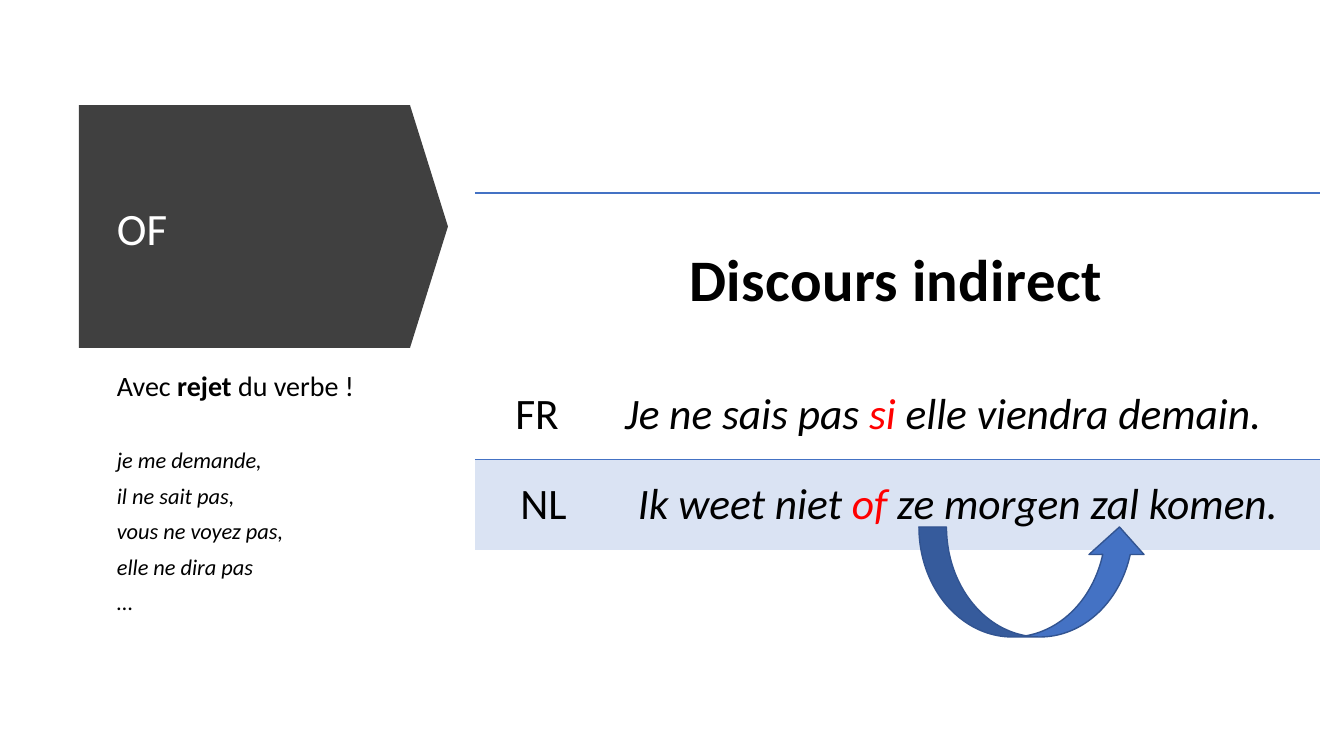
from lxml import etree
from pptx import Presentation
from pptx import util as u
from pptx.dml.color import RGBColor
from pptx.enum import shapes, text
from pptx.oxml.ns import qn

PX = 914400 / 100.8  # EMU per px
COLOURS = {"dark": "404040", "white": "FFFFFF", "black": "000000", "red": "FF0000",
           "blue": "4472C4", "navy": "325491", "pale": "DAE3F3"}

# Content: a paragraph is a list of (text, format) spans
PLAIN, BOLD, ITALIC = {}, {"bold": True}, {"italic": True}
RED = {"italic": True, "colour": "red"}
TITLE = [("OF", {"colour": "white"})]
RULE = [("Avec ", PLAIN), ("rejet", BOLD), (" du verbe !", PLAIN)]
EXAMPLES = [("je me demande,", ITALIC), ("il ne sait pas,", ITALIC),
            ("vous ne voyez pas,", ITALIC), ("elle ne dira pas", ITALIC), ("…", PLAIN)]
HEADING = [("Discours indirect", BOLD)]
SENTENCES = [
    ("FR", [("Je ne sais pas ", ITALIC), ("si", RED), (" elle viendra demain.", ITALIC)]),
    ("NL", [("Ik weet niet ", ITALIC), ("of ", RED), ("ze morgen zal komen.", ITALIC)]),
]

# Layout in px: left, top, width, height
BANNER = (79, 105, 369, 243)
TITLE_BOX = (107, 133, 294, 197)
BODY_BOX = (107, 370, 294, 267)
TABLE = (475, 193, 845, 357)
ARROW = (919, 527, 228, 110)
COLUMNS, ROWS = (150, 695), (177, 90, 90)
TIP = 38


def px(*lengths):
    return [u.Emu(round(length * PX)) for length in lengths]


def rgb(name):
    return RGBColor.from_string(COLOURS[name])


def write(para, spans, size, **layout):
    for name, value in layout.items():
        setattr(para, name, value)
    for words, style in spans:
        span = para.add_run()
        span.text = words
        values = {"name": "Calibri", "size": u.Pt(size), "bold": False, "italic": False, **style}
        span.font.color.rgb = rgb(values.pop("colour", "black"))
        for name, value in values.items():
            setattr(span.font, name, value)


def add_shape(kind, place, fill, line=None):
    shape = page.shapes.add_shape(kind, *px(*place))
    shape.shadow.inherit = False
    shape.fill.solid()
    shape.fill.fore_color.rgb = rgb(fill)
    if line:
        shape.line.color.rgb = rgb(line)
        shape.line.width = u.Pt(1)
    else:
        shape.line.fill.background()
    return shape


def add_box(place, anchor):
    frame = page.shapes.add_textbox(*px(*place)).text_frame
    frame.word_wrap = True
    frame.vertical_anchor = anchor
    return frame


def set_borders(cell, widths):
    """Draw the sides given in points and hide the others."""
    props = cell._tc.get_or_add_tcPr()
    for index, side in enumerate("LRTB"):
        line = etree.Element(qn("a:ln" + side))
        if side in widths:
            line.set("w", str(u.Pt(widths[side])))
            fill = etree.SubElement(line, qn("a:solidFill"))
            etree.SubElement(fill, qn("a:srgbClr"), val=COLOURS["blue"])
        else:
            line.set("w", "0")
            etree.SubElement(line, qn("a:noFill"))
        props.insert(index, line)


def format_cell(cell, insets, fill, borders):
    cell.vertical_anchor = text.MSO_ANCHOR.MIDDLE
    sides = ("margin_left", "margin_top", "margin_right", "margin_bottom")
    for side, inset in zip(sides, px(*insets)):
        setattr(cell, side, inset)
    if fill:
        cell.fill.solid()
        cell.fill.fore_color.rgb = rgb(fill)
    else:
        cell.fill.background()
    set_borders(cell, borders)


deck = Presentation()
deck.slide_width, deck.slide_height = px(1344, 756)
page = deck.slides.add_slide(deck.slide_layouts[6])

# Banner and title
banner = add_shape(shapes.MSO_SHAPE.PENTAGON, BANNER, "dark")
banner.adjustments[0] = TIP / BANNER[3]
frame = add_box(TITLE_BOX, text.MSO_ANCHOR.MIDDLE)
write(frame.paragraphs[0], TITLE, 32, line_spacing=0.9)

# Rule with its examples, the first one set further down
frame = add_box(BODY_BOX, text.MSO_ANCHOR.TOP)
write(frame.paragraphs[0], RULE, 20, line_spacing=0.8, space_before=u.Pt(10))
for index, example in enumerate(EXAMPLES):
    gap = u.Pt(10 if index else 35.5)
    write(frame.add_paragraph(), [example], 16, line_spacing=0.8, space_before=gap)

# Table
table = page.shapes.add_table(len(ROWS), len(COLUMNS), *px(*TABLE)).table
table.first_row = table.horz_banding = False
for column, width in zip(table.columns, px(*COLUMNS)):
    column.width = width
for row, height in zip(table.rows, px(*ROWS)):
    row.height = height

ROW_FORMATS = [  # insets, fill, borders
    ((0, 13, 3, 13), None, {"T": 1.5}),
    ((0, 13, 26, 13), None, {"B": 0.75}),
    ((13, 13, 26, 13), "pale", {"T": 0.75}),
]
for row, row_format in zip(table.rows, ROW_FORMATS):
    for cell in row.cells:
        format_cell(cell, *row_format)

CENTER, LEFT = text.PP_ALIGN.CENTER, text.PP_ALIGN.LEFT
table.cell(0, 0).merge(table.cell(0, 1))
heading = table.cell(0, 0).text_frame.paragraphs[0]
write(heading, HEADING, 42, alignment=CENTER)
heading.runs[0].font._element.set("spc", "30")
for row, (language, sentence) in enumerate(SENTENCES, 1):
    write(table.cell(row, 0).text_frame.paragraphs[0], [(language, PLAIN)], 31, alignment=CENTER)
    write(table.cell(row, 1).text_frame.paragraphs[0], sentence, 31, alignment=LEFT)

# Arrow that moves the verb to the end
add_shape(shapes.MSO_SHAPE.CURVED_UP_ARROW, ARROW, "blue", "navy")

deck.save("out.pptx")
